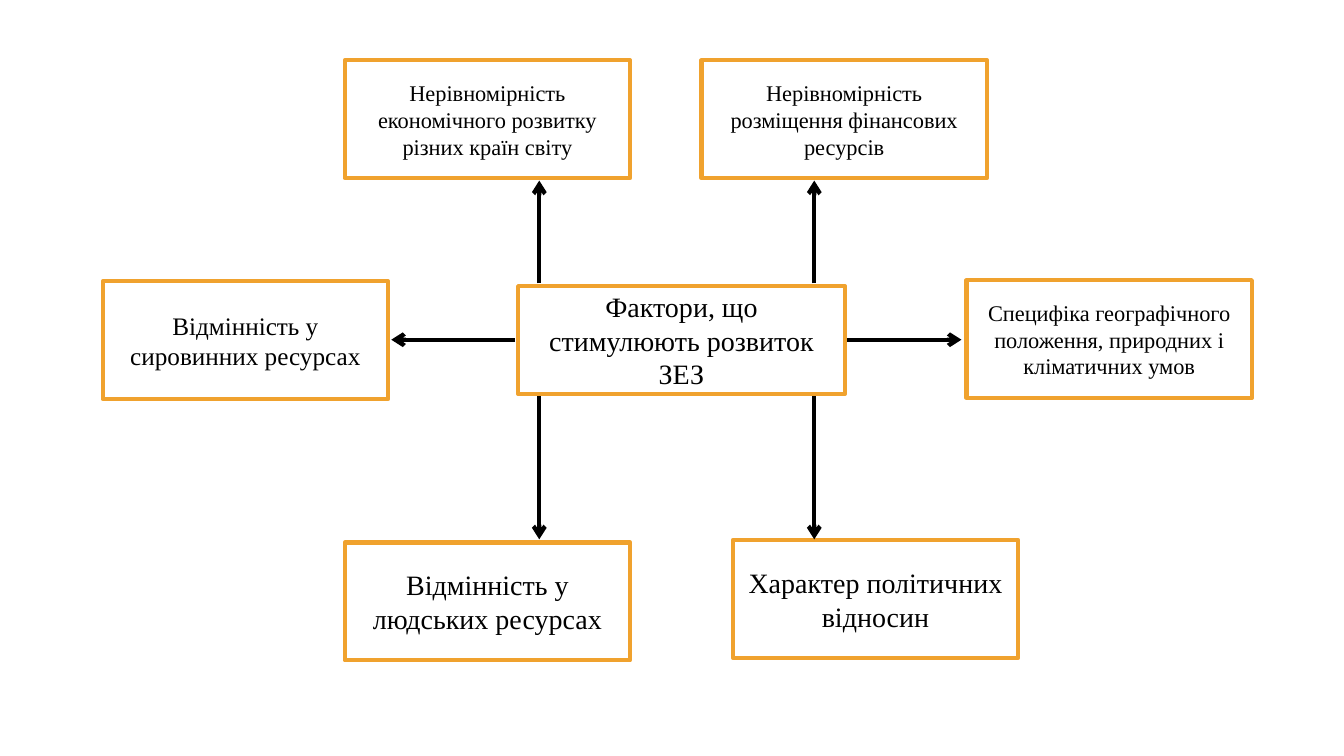
from lxml.etree import SubElement
from pptx import Presentation
from pptx.dml.color import RGBColor
from pptx.enum.shapes import MSO_CONNECTOR, MSO_SHAPE
from pptx.enum.text import MSO_ANCHOR, PP_ALIGN
from pptx.oxml.ns import qn
from pptx.util import Cm, Pt


def paint(target, tone):
    target.solid()
    target.fore_color.rgb = RGBColor.from_string(tone)


deck = Presentation()
deck.slide_width, deck.slide_height = Cm(33.87), Cm(19.05)
slide = deck.slides.add_slide(deck.slide_layouts[6])

wide, high = 7.19, 2.97
boxes = [
    ("Фактори, що стимулюють розвиток ЗЕЗ", 13.06, 7.21, 8.23, 2.72, 20),
    ("Нерівномірність економічного розвитку різних країн світу", 8.69, 1.52, wide, high, 16),
    ("Нерівномірність розміщення фінансових ресурсів", 17.68, 1.52, wide, high, 16),
    ("Відмінність у сировинних ресурсах", 2.59, 7.09, wide, high, 18),
    ("Відмінність у людських ресурсах", 8.69, 13.67, wide, high, 20),
    ("Характер політичних відносин", 18.47, 13.61, wide, high, 20),
    ("Специфіка географічного положення, природних і кліматичних умов", 24.36, 7.06, wide, high, 16),
]
frame = {"word_wrap": True, "vertical_anchor": MSO_ANCHOR.MIDDLE}

for text, left, top, width, height, size in boxes:
    box = slide.shapes.add_shape(MSO_SHAPE.RECTANGLE, Cm(left), Cm(top), Cm(width), Cm(height))
    box.shadow.inherit = False
    paint(box.fill, "FFFFFF")
    paint(box.line.fill, "F0A22E")
    box.line.width = Pt(3)
    for name, value in frame.items():
        setattr(box.text_frame, name, value)
    para = box.text_frame.paragraphs[0]
    para.alignment = PP_ALIGN.CENTER
    run = para.add_run()
    run.text = text
    style = {"name": "Times New Roman", "size": Pt(size)}
    for name, value in style.items():
        setattr(run.font, name, value)
    paint(run.font.fill, "000000")

arrows = [(12.98, 8.56, 9.86, 8.56), (21.34, 8.56, 24.23, 8.56)]
for x in (13.59, 20.52):
    arrows += [(x, 7.14, x, 4.55), (x, 9.98, x, 13.59)]

for ends in arrows:
    arrow = slide.shapes.add_connector(MSO_CONNECTOR.STRAIGHT, *map(Cm, ends))
    paint(arrow.line.fill, "000000")
    arrow.line.width = Pt(3)
    SubElement(arrow.line._get_or_add_ln(), qn("a:tailEnd"), type="arrow")
    SubElement(arrow._element.spPr, qn("a:effectLst"))

deck.save("out.pptx")
